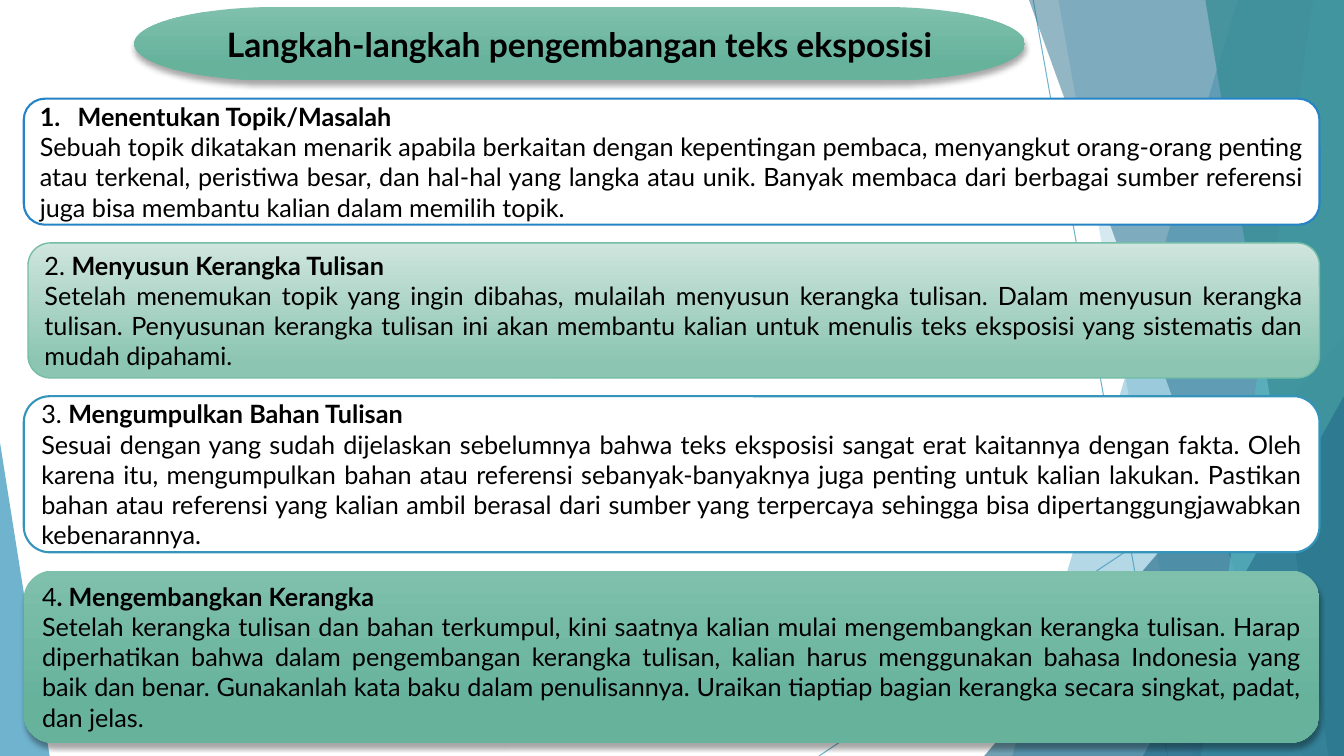
from lxml import etree
from pptx import Presentation
from pptx.dml.color import RGBColor
from pptx.enum import shapes, text
from pptx.oxml import ns
from pptx.util import Pt

WIDTH, HEIGHT = 960, 540
FONT = "Lato"
KIND = shapes.MSO_SHAPE
GREEN = [("7FC0AC", 0), ("66B29B", 0.78)]
PALE_GREEN = [("CFE5DE", 0), ("8CC5B2", 0.88)]

STEPS = [
    dict(box=(17, 70.5, 925.5, 90), fill="FFFFFF", line=("2683C6", 1.5),
         number="", heading="Menentukan Topik/Masalah",
         body="Sebuah topik dikatakan menarik apabila berkaitan dengan kepentingan pembaca, "
              "menyangkut orang-orang penting atau terkenal, peristiwa besar, dan hal-hal yang "
              "langka atau unik. Banyak membaca dari berbagai sumber referensi juga bisa "
              "membantu kalian dalam memilih topik. "),
    dict(box=(20, 173.5, 922.5, 96.5), fill=PALE_GREEN, line=("75BDA7", 1),
         number="2. ", heading="Menyusun Kerangka Tulisan",
         body="Setelah menemukan topik yang ingin dibahas, mulailah menyusun kerangka tulisan. "
              "Dalam menyusun kerangka tulisan. Penyusunan kerangka tulisan ini akan membantu "
              "kalian untuk menulis teks eksposisi yang sistematis dan mudah dipahami. "),
    dict(box=(17, 283, 925.5, 111.5), fill="FFFFFF", line=("3494BA", 1.5),
         number="3. ", heading="Mengumpulkan Bahan Tulisan",
         body="Sesuai dengan yang sudah dijelaskan sebelumnya bahwa teks eksposisi sangat erat "
              "kaitannya dengan fakta. Oleh karena itu, mengumpulkan bahan atau referensi "
              "sebanyak-banyaknya juga penting untuk kalian lakukan. Pastikan bahan atau "
              "referensi yang kalian ambil berasal dari sumber yang terpercaya sehingga bisa "
              "dipertanggungjawabkan kebenarannya. "),
    dict(box=(17, 407.5, 925.5, 123), fill=GREEN, line=None,
         number="4", heading=". Mengembangkan Kerangka ",
         body="Setelah kerangka tulisan dan bahan terkumpul, kini saatnya kalian mulai "
              "mengembangkan kerangka tulisan. Harap diperhatikan bahwa dalam pengembangan "
              "kerangka tulisan, kalian harus menggunakan bahasa Indonesia yang baik dan benar. "
              "Gunakanlah kata baku dalam penulisannya. Uraikan tiaptiap bagian kerangka secara "
              "singkat, padat, dan jelas. "),
]


def color(value):
    return RGBColor.from_string(value)


def add_xml(parent, tag, **attributes):
    return etree.SubElement(parent, ns.qn(tag), attributes)


def set_alpha(element, percent):
    """Make every colour inside the element partly transparent."""
    for node in list(element.iter(ns.qn("a:srgbClr"))):
        add_xml(node, "a:alpha", val=str(percent * 1000))


def paint(shape, fill, line=None):
    """Fill with one colour or with gradient stops that run downwards."""
    shape.shadow.inherit = False
    if isinstance(fill, str):
        shape.fill.solid()
        shape.fill.fore_color.rgb = color(fill)
    else:
        shape.fill.gradient()
        shape.fill.gradient_angle = 270
        for stop, (value, position) in zip(shape.fill.gradient_stops, fill):
            stop.color.rgb = color(value)
            stop.position = position
    if line:
        shape.line.color.rgb = color(line[0])
        shape.line.width = Pt(line[1])
    else:
        shape.line.fill.background()


def add_shadow(shape):
    effects = shape._element.spPr.find(ns.qn("a:effectLst"))
    shadow = add_xml(effects, "a:outerShdw", blurRad=str(Pt(4)), dist=str(Pt(3)),
                     dir="5400000", rotWithShape="0")
    add_xml(shadow, "a:srgbClr", val="000000")
    set_alpha(shadow, 35)


def add_span(para, words, size, bold):
    span = para.add_run()
    span.text = words
    span.font.name = FONT
    span.font.size = Pt(size)
    span.font.bold = bold
    span.font.color.rgb = color("000000")


def add_panel(page, kind, box, fill, line=None):
    panel = page.shapes.add_shape(kind, *map(Pt, box))
    paint(panel, fill, line)
    if not line:
        add_shadow(panel)
    panel.text_frame.word_wrap = True
    panel.text_frame.vertical_anchor = text.MSO_ANCHOR.MIDDLE
    return panel


def add_ray(page, start, end):
    ray = page.shapes.add_connector(shapes.MSO_CONNECTOR.STRAIGHT, *map(Pt, start + end))
    ray.line.color.rgb = color("3494BA")
    ray.line.width = Pt(0.75)
    set_alpha(ray.line._ln, 70)
    add_xml(ray._element.spPr, "a:effectLst")


def add_band(page, top_left, bottom_left, fill, alpha):
    """Full-height facet from a slanted left edge to the right side of the page."""
    outline = page.shapes.build_freeform(Pt(top_left), 0)
    outline.add_line_segments([(Pt(x), Pt(y)) for x, y in
                               [(WIDTH, 0), (WIDTH, HEIGHT), (bottom_left, HEIGHT)]])
    band = outline.convert_to_shape()
    paint(band, fill)
    set_alpha(band._element.spPr, alpha)


def add_corner(page, box, apex, fill, alpha):
    corner = page.shapes.add_shape(KIND.ISOSCELES_TRIANGLE, *map(Pt, box))
    corner.adjustments[0] = apex
    paint(corner, fill)
    set_alpha(corner._element.spPr, alpha)


def add_facets(page):
    add_ray(page, (738, 0), (834, HEIGHT))
    add_ray(page, (WIDTH, 290), (585, HEIGHT))
    add_band(page, 884, 723, "3494BA", 36)
    add_band(page, 756, 852, "3494BA", 20)
    add_corner(page, (703, 240, 257, 300), 1, "276F8B", 66)
    add_band(page, 735, 930, "276F8B", 50)
    add_band(page, 938, 858, "58B6C0", 70)
    add_band(page, 861, 949, "3A8F98", 80)
    add_corner(page, (816.5, 283, 143.5, 257), 1, "276F8B", 66)
    add_corner(page, (0, 316, 35.5, 224), 0, "3494BA", 70)


def add_title(page, box):
    panel = add_panel(page, KIND.FLOWCHART_TERMINATOR, box, GREEN)
    para = panel.text_frame.paragraphs[0]
    para.alignment = text.PP_ALIGN.CENTER
    add_span(para, "Langkah-langkah pengembangan teks eksposisi", 24, True)


def add_step(page, box, fill, line, number, heading, body):
    frame = add_panel(page, KIND.ROUNDED_RECTANGLE, box, fill, line).text_frame
    top, bottom = frame.paragraphs[0], frame.add_paragraph()
    top.alignment = bottom.alignment = text.PP_ALIGN.JUSTIFY
    if number:
        add_span(top, number, 18, False)
    else:
        indents = top._p.get_or_add_pPr()
        indents.set("marL", str(Pt(27)))
        indents.set("indent", str(-Pt(27)))
        add_xml(indents, "a:buFont", typeface="+mj-lt")
        add_xml(indents, "a:buAutoNum", type="arabicPeriod")
    add_span(top, heading, 18, True)
    add_span(bottom, body, 18, False)


def main():
    deck = Presentation()
    deck.slide_width, deck.slide_height = Pt(WIDTH), Pt(HEIGHT)
    page = deck.slides.add_slide(deck.slide_layouts[6])
    add_facets(page)
    add_title(page, (96, 5, 636, 52.5))
    for step in STEPS:
        add_step(page, **step)
    deck.save("out.pptx")


if __name__ == "__main__":
    main()
